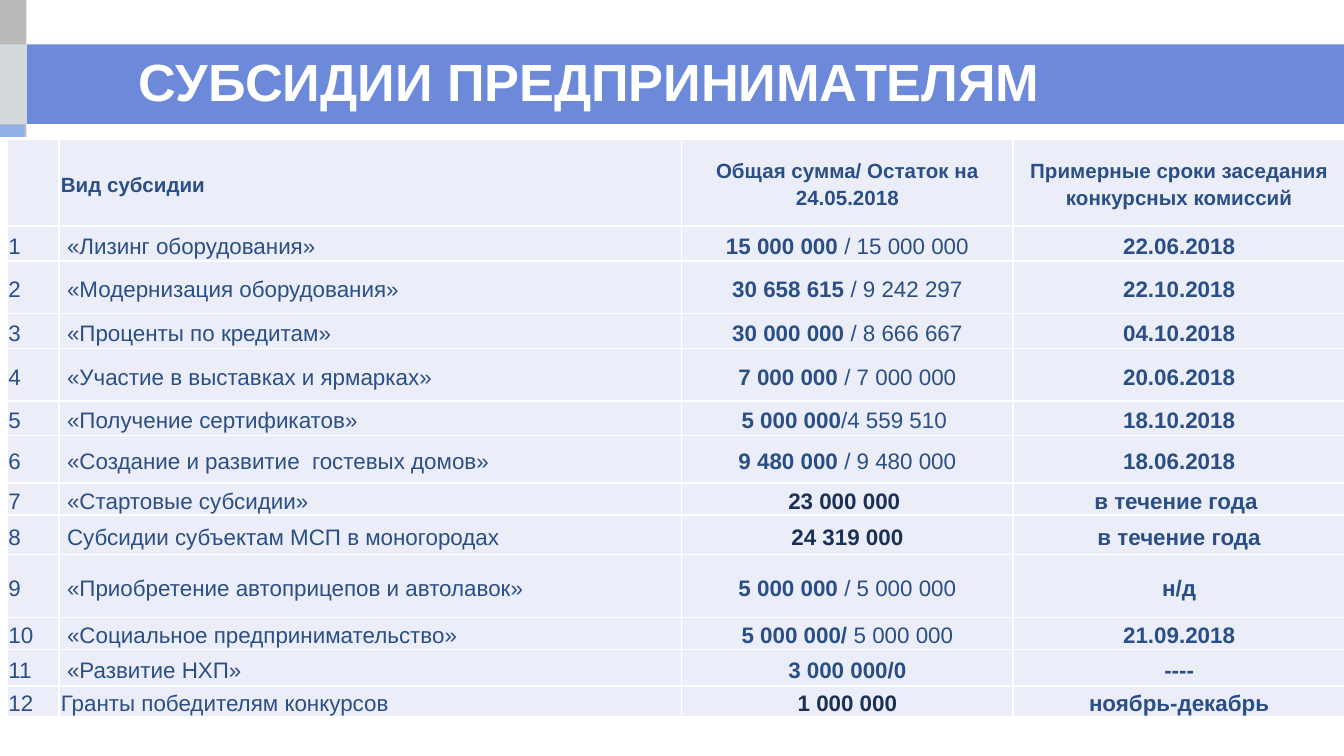
from lxml.etree import SubElement
from pptx import Presentation
from pptx.dml.color import RGBColor
from pptx.enum.shapes import MSO_SHAPE
from pptx.enum.text import MSO_ANCHOR, PP_ALIGN
from pptx.oxml.ns import qn
from pptx.util import Cm, Pt

WHITE = RGBColor(0xFF, 0xFF, 0xFF)
GRAY = RGBColor(0xBA, 0xBA, 0xBA)
PALE_GRAY = RGBColor(0xD3, 0xD9, 0xDD)
LIGHT_BLUE = RGBColor(0x8F, 0xAF, 0xE9)
BLUE = RGBColor(0x6C, 0x89, 0xDA)
TEXT_BLUE = RGBColor(0x2A, 0x4F, 0x86)
DARK_BLUE = RGBColor(0x1A, 0x31, 0x56)
CELL_FILL = RGBColor(0xEB, 0xED, 0xF8)

FONT = "Arial"
COLUMN_WIDTHS = (0.99, 11.76, 6.27, 6.27)
ROW_HEIGHTS = (1.65, 0.66, 0.99, 0.66, 0.99, 0.66, 0.89, 0.61, 0.74, 1.19, 0.61, 0.69, 0.48)
HEADERS = (
    "",
    "Вид субсидии",
    "Общая сумма/ Остаток на 24.05.2018",
    "Примерные сроки заседания конкурсных комиссий",
)
SUBSIDIES = (
    (" «Лизинг оборудования»", "15 000 000", " / 15 000 000", "22.06.2018"),
    (" «Модернизация оборудования»", "30 658 615", " / 9 242 297", "22.10.2018"),
    (" «Проценты по кредитам»", "30 000 000", " / 8 666 667", "04.10.2018"),
    (" «Участие в выставках и ярмарках»", "7 000 000 ", "/ 7 000 000", "20.06.2018"),
    (" «Получение сертификатов»", "5 000 000", "/4 559 510 ", "18.10.2018"),
    (" «Создание и развитие  гостевых домов»", "9 480 000", " / 9 480 000", "18.06.2018"),
    (" «Стартовые субсидии»", "23 000 000 ", "", "в течение года "),
    (" Субсидии субъектам МСП в моногородах", "24 319 000", "", "в течение года"),
    (" «Приобретение автоприцепов и автолавок»", "5 000 000", " / 5 000 000", "н/д"),
    (" «Социальное предпринимательство»", "5 000 000/ ", "5 000 000", "21.09.2018"),
    (" «Развитие НХП»", "3 000 000/0", "", "----"),
    ("Гранты победителям конкурсов", "1 000 000", "", "ноябрь-декабрь"),
)


def add_block(slide, left, top, width, height, color):
    """Add a plain filled rectangle and return it."""
    shape = slide.shapes.add_shape(
        MSO_SHAPE.RECTANGLE, Cm(left), Cm(top), Cm(width), Cm(height)
    )
    shape.shadow.inherit = False
    shape.fill.solid()
    shape.fill.fore_color.rgb = color
    shape.line.fill.background()
    return shape


def add_background(slide):
    """Draw the title band, the side blocks and the white panel."""
    add_block(slide, 0, 0.84, 25.4, 1.5, BLUE)
    add_block(slide, -0.03, 0, 0.53, 14.28, GRAY)
    add_block(slide, 0, 0.84, 0.51, 1.5, PALE_GRAY)
    add_block(slide, -0.05, 2.36, 0.51, 1.5, LIGHT_BLUE)
    panel = add_block(slide, 0, 2.62, 25.4, 11.66, WHITE)
    panel.line.color.rgb = WHITE
    panel.line.width = Pt(2)


def format_title(slide, text):
    """Fill the title placeholder and bring it in front of the band."""
    title = slide.shapes.title
    title.left, title.top, title.width, title.height = Cm(-0.3), Cm(0.33), Cm(22.86), Cm(2.39)
    title.text_frame.text = text
    title.text_frame.word_wrap = True
    title.text_frame.vertical_anchor = MSO_ANCHOR.MIDDLE
    paragraph = title.text_frame.paragraphs[0]
    paragraph.alignment = PP_ALIGN.CENTER
    set_font(paragraph.font, 28, True, WHITE)
    title.element.getparent().append(title.element)


def set_font(font, size, bold, color):
    """Apply the slide's typeface with a size, weight and colour."""
    font.name = FONT
    font.size = Pt(size)
    font.bold = bold
    font.color.rgb = color


def style_cell(cell):
    """Give a cell white borders, a pale fill and thin margins."""
    properties = cell._tc.get_or_add_tcPr()
    for side in ("a:lnL", "a:lnR", "a:lnT", "a:lnB"):
        line = SubElement(properties, qn(side), w=str(Pt(1)))
        fill = SubElement(line, qn("a:solidFill"))
        SubElement(fill, qn("a:srgbClr"), val=str(WHITE))
    cell.fill.solid()
    cell.fill.fore_color.rgb = CELL_FILL
    cell.vertical_anchor = MSO_ANCHOR.MIDDLE
    cell.margin_left = cell.margin_right = cell.margin_top = Cm(0.03)
    cell.margin_bottom = 0


def write_cell(cell, text, alignment, size=12, bold=False, color=TEXT_BLUE, remainder=""):
    """Write a cell's text, with an optional regular-weight remainder."""
    style_cell(cell)
    paragraph = cell.text_frame.paragraphs[0]
    paragraph.alignment = alignment
    paragraph.line_spacing = 1.15
    paragraph.space_after = Pt(10)
    set_font(paragraph.font, size, bold, color)
    if text:
        set_font(paragraph.add_run().font, size, bold, color)
        paragraph.runs[0].text = text
    if remainder:
        run = paragraph.add_run()
        run.text = remainder
        set_font(run.font, size, False, color)


def add_subsidy_table(slide):
    """Build the table of subsidies, amounts and dates."""
    frame = slide.shapes.add_table(
        len(ROW_HEIGHTS), len(COLUMN_WIDTHS), Cm(0.13), Cm(2.62),
        Cm(sum(COLUMN_WIDTHS)), Cm(sum(ROW_HEIGHTS)),
    )
    table = frame.table
    for column, width in zip(table.columns, COLUMN_WIDTHS):
        column.width = Cm(width)
    for row, height in zip(table.rows, ROW_HEIGHTS):
        row.height = Cm(height)

    alignments = (PP_ALIGN.LEFT, PP_ALIGN.LEFT, PP_ALIGN.CENTER, PP_ALIGN.CENTER)
    for index, (header, alignment) in enumerate(zip(HEADERS, alignments)):
        write_cell(table.cell(0, index), header, alignment, size=11, bold=True)

    for number, (name, total, remainder, date) in enumerate(SUBSIDIES, 1):
        total_color = TEXT_BLUE if "/" in total + remainder else DARK_BLUE
        write_cell(table.cell(number, 0), str(number), PP_ALIGN.LEFT)
        write_cell(table.cell(number, 1), name, PP_ALIGN.LEFT)
        write_cell(table.cell(number, 2), total, PP_ALIGN.CENTER,
                   bold=True, color=total_color, remainder=remainder)
        write_cell(table.cell(number, 3), date, PP_ALIGN.CENTER, bold=True)


def main():
    """Build and save the presentation."""
    presentation = Presentation()
    presentation.slide_width = Cm(25.4)
    presentation.slide_height = Cm(14.28)
    slide = presentation.slides.add_slide(presentation.slide_layouts[5])
    add_background(slide)
    format_title(slide, "СУБСИДИИ ПРЕДПРИНИМАТЕЛЯМ")
    add_subsidy_table(slide)
    presentation.save("out.pptx")


if __name__ == "__main__":
    main()
